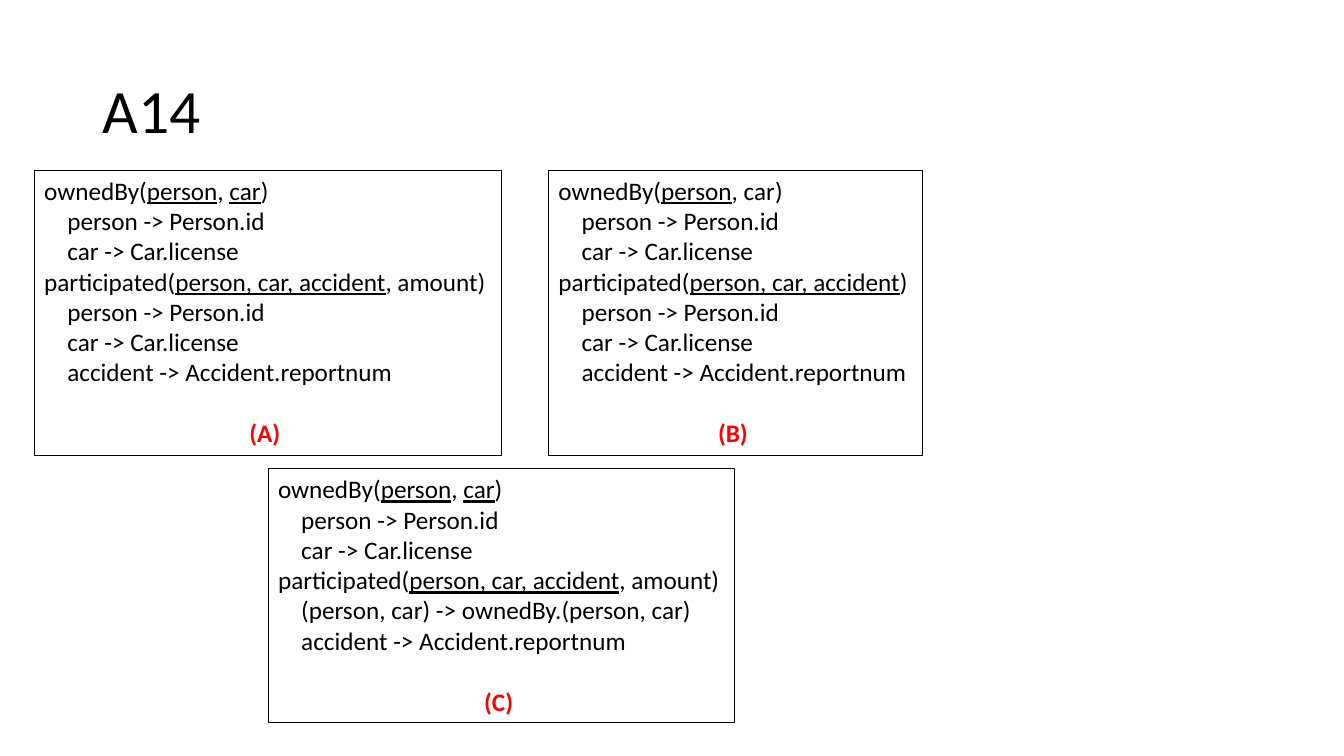
from pptx import Presentation
from pptx import util as u
from pptx.dml.color import RGBColor
from pptx.enum import shapes, text

PX = u.Inches(1) // 100
BLACK, RED = "000000", "FF0000"
INDENT = 23
BLANK_LINE = u.Pt(22)

PERSON = "person -> Person.id"
CAR = "car -> Car.license"
ACCIDENT = "accident -> Accident.reportnum"

SCHEMAS = [
    ("(A)", (34, 169, 463, 283), [
        ("ownedBy(_person_, _car_)", [PERSON, CAR]),
        ("participated(_person, car, accident_, amount)", [PERSON, CAR, ACCIDENT]),
    ]),
    ("(B)", (544, 169, 371, 283), [
        ("ownedBy(_person_, car)", [PERSON, CAR]),
        ("participated(_person, car, accident_)", [PERSON, CAR, ACCIDENT]),
    ]),
    ("(C)", (266, 465, 463, 252), [
        ("ownedBy(_person_, _car_)", [PERSON, CAR]),
        ("participated(_person, car, accident_, amount)",
         ["(person, car) -> ownedBy.(person, car)", ACCIDENT]),
    ]),
]


def px(*lengths):
    return [length * PX for length in lengths]


def color(value):
    return RGBColor.from_string(value)


def apply(target, values):
    for name, value in values.items():
        setattr(target, name, value)


def add_span(para, words, size, ink=BLACK, **style):
    span = para.add_run()
    span.text = words
    apply(span.font, {"name": "Calibri", "size": u.Pt(size), **style})
    span.font.color.rgb = color(ink)


def next_para(frame):
    first = frame.paragraphs[0]
    para = first if not first.runs else frame.add_paragraph()
    para.alignment = text.PP_ALIGN.LEFT
    return para


def add_relation(frame, heading, references):
    para = next_para(frame)
    for position, words in enumerate(heading.split("_")):
        add_span(para, words, 18, underline=position % 2 == 1)
    for reference in references:
        para = next_para(frame)
        para._p.get_or_add_pPr().set("marL", str(INDENT * PX))
        add_span(para, reference, 18)


def add_schema(page, label, place, relations):
    box = page.shapes.add_shape(shapes.MSO_SHAPE.RECTANGLE, *px(*place))
    box.shadow.inherit = False
    box.fill.background()
    box.line.color.rgb = color(BLACK)
    box.line.width = u.Pt(0.75)
    frame = box.text_frame
    apply(frame, {
        "word_wrap": False,
        "auto_size": text.MSO_AUTO_SIZE.SHAPE_TO_FIT_TEXT,
        "vertical_anchor": text.MSO_ANCHOR.TOP,
    })
    for heading, references in relations:
        add_relation(frame, heading, references)
    para = next_para(frame)
    apply(para, {"alignment": text.PP_ALIGN.CENTER, "space_before": BLANK_LINE})
    add_span(para, label, 18, RED, bold=True)


def add_title(page, words):
    frame = page.shapes.add_textbox(*px(92, 40, 1150, 145)).text_frame
    apply(frame, {"word_wrap": True, "vertical_anchor": text.MSO_ANCHOR.MIDDLE})
    para = next_para(frame)
    para.line_spacing = 0.9
    add_span(para, words, 44)


def main():
    deck = Presentation()
    width, height = px(1333, 750)
    apply(deck, {"slide_width": width, "slide_height": height})
    page = deck.slides.add_slide(deck.slide_layouts[6])
    add_title(page, "A14")
    for schema in SCHEMAS:
        add_schema(page, *schema)
    deck.save("out.pptx")


if __name__ == "__main__":
    main()
